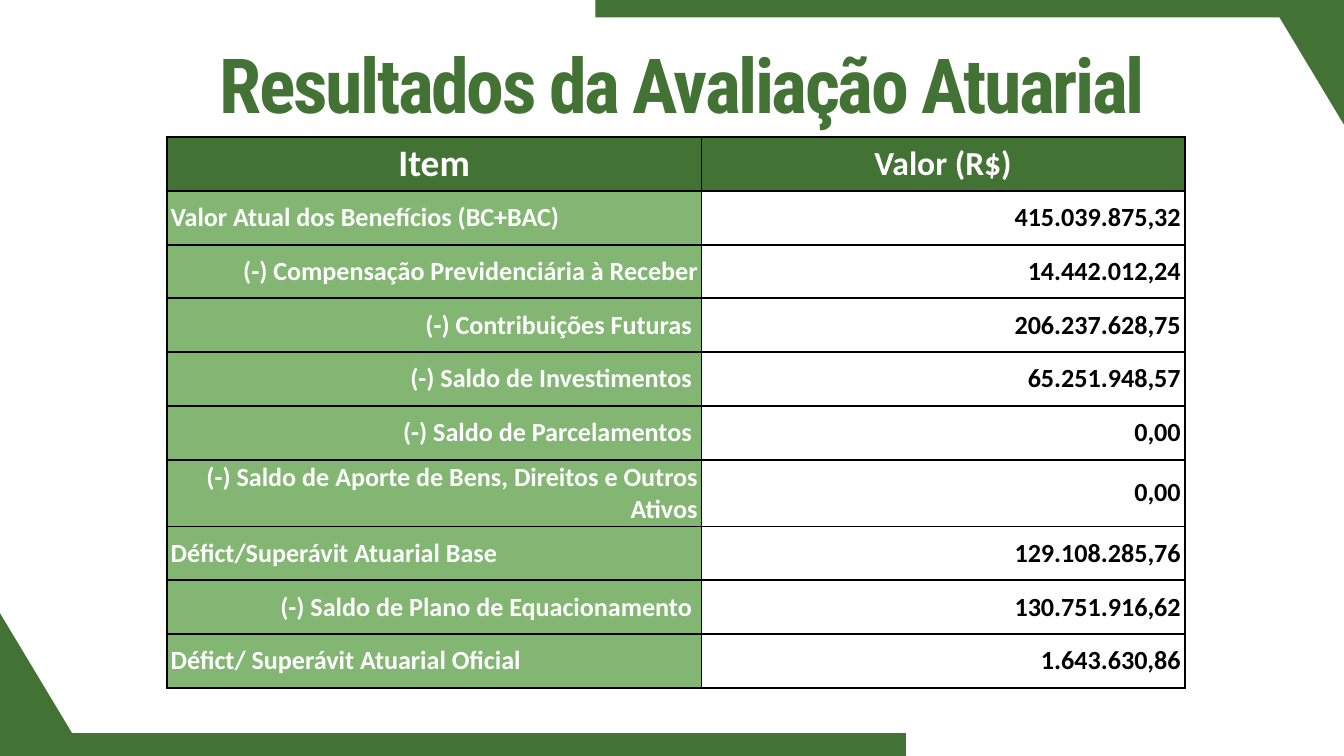
from dataclasses import dataclass

from lxml import etree
from pptx import Presentation
from pptx.dml.color import RGBColor
from pptx.enum.shapes import MSO_SHAPE
from pptx.enum.text import MSO_ANCHOR, PP_ALIGN
from pptx.oxml.ns import qn
from pptx.util import Inches, Pt

RECTANGLE = MSO_SHAPE.RECTANGLE
MIDDLE = MSO_ANCHOR.MIDDLE
LEFT, CENTER, RIGHT = PP_ALIGN.LEFT, PP_ALIGN.CENTER, PP_ALIGN.RIGHT
COLUMNS, ROWS = 20, 11.25  # square grid over the whole slide


@dataclass(frozen=True)
class Theme:
    dark_green: str = "437235"
    light_green: str = "82B672"
    white: str = "FFFFFF"
    black: str = "000000"
    title_font: str = "Roboto Condensed"
    table_font: str = "Calibri"
    title_size: float = 81.4
    title_leading: float = 80.6
    title_tracking: float = -2.6
    item_header_size: float = 40
    value_header_size: float = 36
    body_size: float = 28
    border_width: float = 2.25


class SlideBuilder:
    """Places styled elements on one slide, measured in grid units."""

    def __init__(self, presentation, theme):
        self.theme = theme
        self.module_x = presentation.slide_width / COLUMNS
        self.module_y = presentation.slide_height / ROWS
        self.slide = presentation.slides.add_slide(presentation.slide_layouts[6])

    def frame(self, left, top, width, height):
        return (round(left * self.module_x), round(top * self.module_y),
                round(width * self.module_x), round(height * self.module_y))

    def band(self, left, top, width, height, rotation=0):
        shape = self.slide.shapes.add_shape(
            RECTANGLE, *self.frame(left, top, width, height))
        shape.rotation = rotation
        shape.shadow.inherit = False
        shape.fill.solid()
        shape.fill.fore_color.rgb = RGBColor.from_string(self.theme.dark_green)
        shape.line.fill.background()

    def add_text(self, paragraph, text, font_name, size, color, alignment):
        paragraph.alignment = alignment
        run = paragraph.add_run()
        run.text = text
        run.font.name = font_name
        run.font.size = Pt(size)
        run.font.bold = True
        run.font.color.rgb = RGBColor.from_string(color)
        return run

    def title(self, text, left, top, width, height):
        theme = self.theme
        box = self.slide.shapes.add_textbox(*self.frame(left, top, width, height))
        text_frame = box.text_frame
        text_frame.word_wrap = True
        text_frame.margin_left = text_frame.margin_right = 0
        text_frame.margin_top = text_frame.margin_bottom = 0
        paragraph = text_frame.paragraphs[0]
        paragraph.line_spacing = Pt(theme.title_leading)
        run = self.add_text(paragraph, text, theme.title_font, theme.title_size,
                            theme.dark_green, CENTER)
        run._r.get_or_add_rPr().set("spc", str(round(theme.title_tracking * 100)))

    def borders(self, cell):
        properties = cell._tc.get_or_add_tcPr()
        for side in ("a:lnL", "a:lnR", "a:lnT", "a:lnB"):
            line = etree.SubElement(properties, qn(side),
                                    w=str(Pt(self.theme.border_width)))
            fill = etree.SubElement(line, qn("a:solidFill"))
            etree.SubElement(fill, qn("a:srgbClr"), val=self.theme.black)

    def cell(self, cell, text, size, color, fill, alignment):
        self.borders(cell)
        cell.fill.solid()
        cell.fill.fore_color.rgb = RGBColor.from_string(fill)
        cell.vertical_anchor = MIDDLE
        cell.margin_left = cell.margin_right = Inches(0.06)
        cell.margin_top = cell.margin_bottom = Inches(0.03)
        self.add_text(cell.text_frame.paragraphs[0], text, self.theme.table_font,
                      size, color, alignment)

    def table(self, headers, records, left, top, widths, row_height):
        theme = self.theme
        row_count = len(records) + 1
        table = self.slide.shapes.add_table(
            row_count, len(widths),
            *self.frame(left, top, sum(widths), row_height * row_count)).table
        table.first_row = table.horz_banding = False
        for column, width in zip(table.columns, widths):
            column.width = round(width * self.module_x)

        # Header row
        sizes = (theme.item_header_size, theme.value_header_size)
        for index, (text, size) in enumerate(zip(headers, sizes)):
            self.cell(table.cell(0, index), text, size, theme.white,
                      theme.dark_green, CENTER)

        # Deductions sit on the right, totals on the left
        for index, (item, value) in enumerate(records, start=1):
            alignment = RIGHT if item.startswith("(-)") else LEFT
            self.cell(table.cell(index, 0), item, theme.body_size, theme.white,
                      theme.light_green, alignment)
            self.cell(table.cell(index, 1), value, theme.body_size, theme.black,
                      theme.white, RIGHT)


RESULTS = [
    ("Valor Atual dos Benefícios (BC+BAC)", "415.039.875,32"),
    ("(-) Compensação Previdenciária à Receber", "14.442.012,24"),
    ("(-) Contribuições Futuras ", "206.237.628,75"),
    ("(-) Saldo de Investimentos ", "65.251.948,57"),
    ("(-) Saldo de Parcelamentos ", "0,00"),
    ("(-) Saldo de Aporte de Bens, Direitos e Outros Ativos", "0,00"),
    ("Défict/Superávit Atuarial Base", "129.108.285,76"),
    ("(-) Saldo de Plano de Equacionamento ", "130.751.916,62"),
    ("Défict/ Superávit Atuarial Oficial", "1.643.630,86"),
]


def main():
    presentation = Presentation()
    presentation.slide_width = Inches(20)
    presentation.slide_height = Inches(11.25)
    builder = SlideBuilder(presentation, Theme())

    # Corner bands: bottom left, then top right
    builder.band(0.46, 8.79, 1.5, 7.61, rotation=329)
    builder.band(0.88, 10.91, 12.6, 0.34)
    builder.band(19.25, -0.84, 1.5, 2.48, rotation=329)
    builder.band(8.86, -0.67, 10.3, 0.93)

    # Title and results table
    builder.title("Resultados da Avaliação Atuarial", 2.5, 0.79, 15.31, 1.19)
    builder.table(("Item", "Valor (R$)"), RESULTS, 2.48, 2.04,
                  widths=(7.96, 7.19), row_height=0.8)

    presentation.save("out.pptx")


if __name__ == "__main__":
    main()
